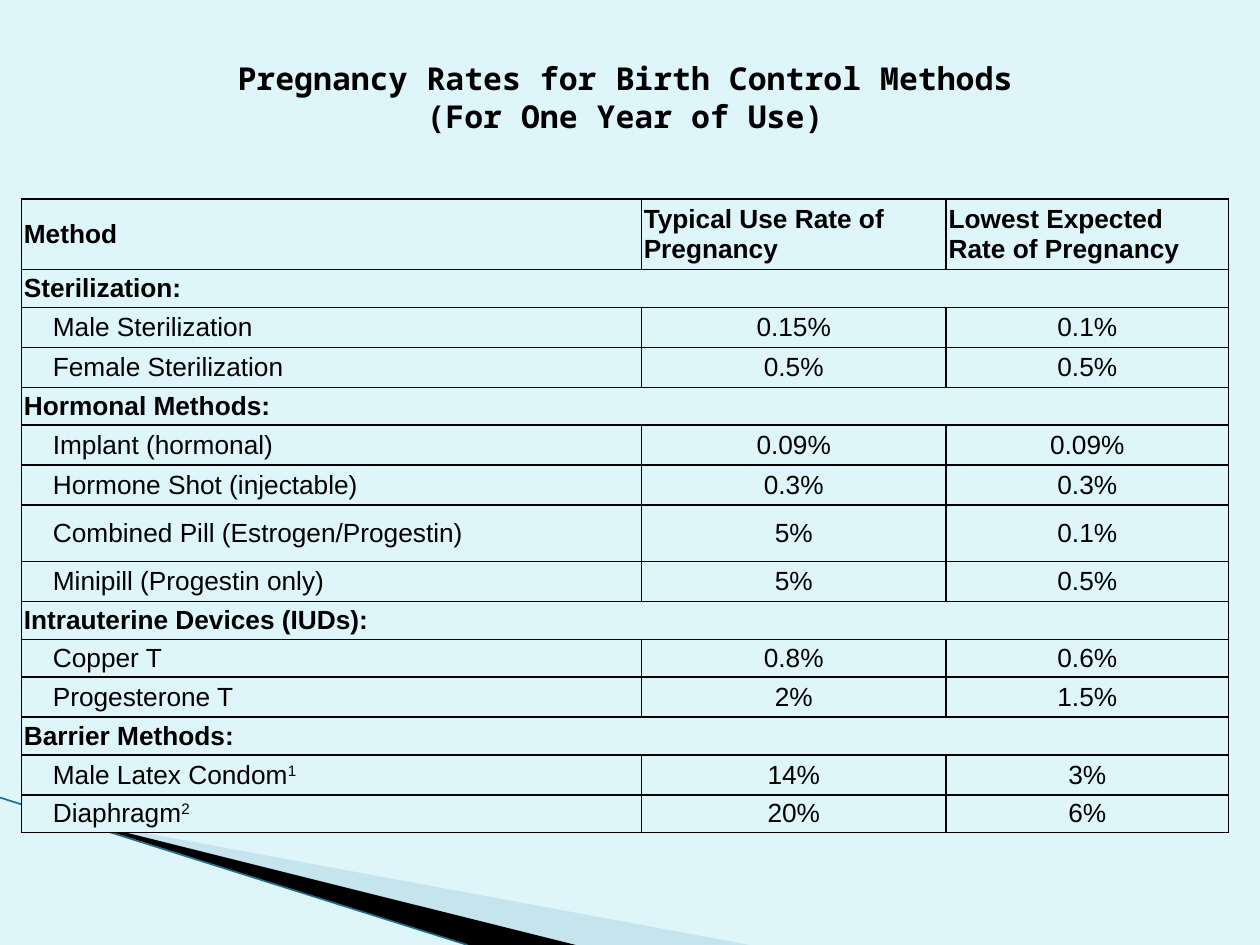
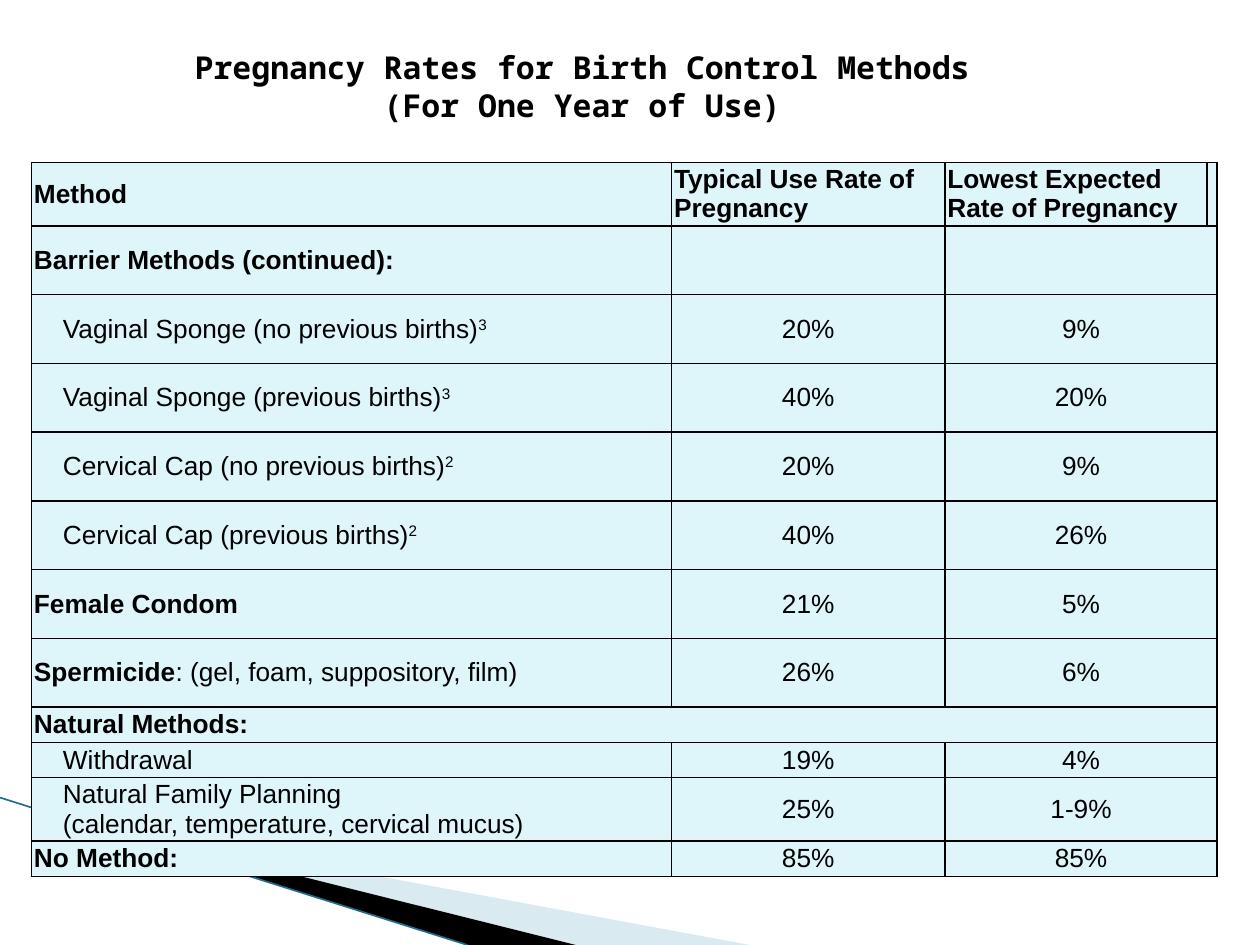
from dataclasses import dataclass

from lxml import etree
from pptx import Presentation
from pptx import util as u
from pptx.dml.color import RGBColor
from pptx.enum import text
from pptx.enum.shapes import MSO_CONNECTOR
from pptx.oxml.ns import qn

COLORS = {"ink": "000000", "ice": "DEF5FA", "paper": "FFFFFF",
          "wedge": "A0CBDC", "edge": "1F6E8C"}
TITLE = ("Pregnancy Rates for Birth Control Methods", "(For One Year of Use)")
COLUMN_HEADS = ("Typical Use Rate of Pregnancy", "Lowest Expected Rate of Pregnancy")


def rgb(name):
    return RGBColor.from_string(COLORS[name])


@dataclass
class Row:
    """One table row; without values its label runs across the whole table."""
    height: float
    label: str
    values: tuple = ()
    bold: bool = False
    indent: bool = False
    note: str = ""
    detail: str = ""


def head(height):
    return Row(height, "Method", COLUMN_HEADS, bold=True)


def group(height, label, *values):
    return Row(height, label, values, bold=True)


def item(height, label, typical, lowest, note=""):
    return Row(height, label, (typical, lowest), indent=True, note=note)


class Deck:
    """Style and current page; lengths count cells of a 100 x 75 grid."""
    COLUMNS, ROWS = 100, 75
    TITLE_FONT, TABLE_FONT = "Noto Sans Mono", "Arial"
    TITLE_SIZE, TABLE_SIZE = 18, 15
    INSET, INDENT = 0.2, 2.3

    def __init__(self):
        self.deck = Presentation()
        self.deck.slide_width, self.deck.slide_height = u.Inches(10), u.Inches(7.5)
        self.page = None

    def x(self, columns):
        return round(self.deck.slide_width * columns / self.COLUMNS)

    def y(self, rows):
        return round(self.deck.slide_height * rows / self.ROWS)

    def new_page(self, background):
        self.page = self.deck.slides.add_slide(self.deck.slide_layouts[5])
        fill = self.page.background.fill
        fill.solid()
        fill.fore_color.rgb = rgb(background)
        self.wedge([(5.5, 65), (59.5, 75), (45.6, 75)], "wedge", 40)
        self.wedge([(5.3, 64.9), (45.7, 75), (37.1, 75)], "ink")
        self.edge((0, 63.3), (37.1, 75))

    def wedge(self, corners, color, opacity=100):
        points = [(self.x(left), self.y(top)) for left, top in corners]
        outline = self.page.shapes.build_freeform(*points[0])
        outline.add_line_segments(points[1:])
        shape = outline.convert_to_shape()
        shape.shadow.inherit = False
        shape.fill.solid()
        shape.fill.fore_color.rgb = rgb(color)
        shape.line.fill.background()
        if opacity < 100:
            tint = shape._element.spPr.find(".//" + qn("a:srgbClr"))
            etree.SubElement(tint, qn("a:alpha"), val=str(opacity * 1000))

    def edge(self, start, end):
        line = self.page.shapes.add_connector(
            MSO_CONNECTOR.STRAIGHT, self.x(start[0]), self.y(start[1]),
            self.x(end[0]), self.y(end[1]))
        line.line.color.rgb = rgb("edge")
        line.line.width = u.Pt(0.95)
        etree.SubElement(line._element.spPr, qn("a:effectLst"))

    def title(self, left, top, width, height):
        box = self.page.shapes.title
        box.left, box.top = self.x(left), self.y(top)
        box.width, box.height = self.x(width), self.y(height)
        frame = box.text_frame
        frame.word_wrap = True
        frame.auto_size = text.MSO_AUTO_SIZE.NONE
        frame.vertical_anchor = text.MSO_ANCHOR.TOP
        for number, words in enumerate(TITLE):
            para = frame.add_paragraph() if number else frame.paragraphs[0]
            para.alignment = text.PP_ALIGN.CENTER
            self.span(para, words, self.TITLE_FONT, self.TITLE_SIZE, bold=True)

    def span(self, para, words, font, size, bold=False, raised=False):
        for number, line in enumerate(words.split("\n")):
            if number:
                para.add_line_break()
            span = para.add_run()
            span.text = line
            span.font.name, span.font.size = font, u.Pt(size)
            span.font.bold = bold
            span.font.color.rgb = rgb("ink")
            if raised:
                span._r.get_or_add_rPr().set("baseline", "30000")

    def table(self, left, top, widths, rows):
        frame = self.page.shapes.add_table(
            len(rows), len(widths), self.x(left), self.y(top),
            self.x(sum(widths)), self.y(sum(row.height for row in rows)))
        table = frame.table
        table.first_row = table.horz_banding = False
        for column, width in zip(table.columns, widths):
            column.width = self.x(width)
        last = len(widths) - 1
        for number, row in enumerate(rows):
            table.rows[number].height = self.y(row.height)
            cells = [table.cell(number, place) for place in range(len(widths))]
            for cell in cells:
                self.style_cell(cell)
            if not row.values:
                cells[0].merge(cells[last])
            elif number and last > 2:
                cells[2].merge(cells[last])
            self.label(cells[0], row)
            for cell, value in zip(cells[1:], row.values):
                if value:
                    para = cell.text_frame.paragraphs[0]
                    if number:
                        para.alignment = text.PP_ALIGN.CENTER
                    self.span(para, value, self.TABLE_FONT, self.TABLE_SIZE,
                              bold=not number)

    def label(self, cell, row):
        para = cell.text_frame.paragraphs[0]
        if row.indent:
            para._p.get_or_add_pPr().set("marL", str(self.x(self.INDENT)))
        style = (self.TABLE_FONT, self.TABLE_SIZE)
        self.span(para, row.label, *style, bold=row.bold)
        if row.detail:
            self.span(para, row.detail, *style)
        if row.note:
            self.span(para, row.note, *style, raised=True)

    def style_cell(self, cell):
        cell.margin_left = cell.margin_right = self.x(self.INSET)
        cell.margin_top = cell.margin_bottom = self.y(self.INSET)
        cell.vertical_anchor = text.MSO_ANCHOR.MIDDLE
        properties = cell._tc.get_or_add_tcPr()
        for side in ("lnL", "lnR", "lnT", "lnB"):
            border = etree.SubElement(properties, qn("a:" + side), w=str(u.Pt(1)))
            fill = etree.SubElement(border, qn("a:solidFill"))
            etree.SubElement(fill, qn("a:srgbClr"), val=COLORS["ink"])
        cell.fill.solid()
        cell.fill.fore_color.rgb = rgb("ice")

    def save(self):
        self.deck.save("out.pptx")


def main():
    deck = Deck()

    deck.new_page("ice")
    deck.title(1.7, 4.2, 95.8, 7.1)
    deck.table(1.7, 15.8, (49.2, 24.2, 22.4), [
        head(5.6),
        group(3, "Sterilization:"),
        item(3.17, "Male Sterilization", "0.15%", "0.1%"),
        item(3.17, "Female Sterilization", "0.5%", "0.5%"),
        group(3, "Hormonal Methods:"),
        item(3.17, "Implant (hormonal)", "0.09%", "0.09%"),
        item(3.17, "Hormone Shot (injectable)", "0.3%", "0.3%"),
        item(4.5, "Combined Pill (Estrogen/Progestin)", "5%", "0.1%"),
        item(3.17, "Minipill (Progestin only)", "5%", "0.5%"),
        group(3, "Intrauterine Devices (IUDs):"),
        item(3, "Copper T", "0.8%", "0.6%"),
        item(3.17, "Progesterone T", "2%", "1.5%"),
        group(3, "Barrier Methods:"),
        item(3.17, "Male Latex Condom", "14%", "3%", note="1"),
        item(3, "Diaphragm", "20%", "6%", note="2"),
    ])

    deck.new_page("paper")
    deck.title(5.8, 3.3, 80.8, 10.1)
    deck.table(2.5, 12.9, (50.8, 21.7, 20.8, 0.8), [
        head(4.5),
        group(5.46, "Barrier Methods (continued):", "", ""),
        item(5.46, "Vaginal Sponge (no previous births)", "20%", "9%", note="3"),
        item(5.46, "Vaginal Sponge (previous births)", "40%", "20%", note="3"),
        item(5.46, "Cervical Cap (no previous births)", "20%", "9%", note="2"),
        item(5.46, "Cervical Cap (previous births)", "40%", "26%", note="2"),
        group(5.46, "Female Condom", "21%", "5%"),
        Row(5.46, "Spermicide", ("26%", "6%"), bold=True,
            detail=": (gel, foam, suppository, film)"),
        group(2.8, "Natural Methods:"),
        item(2.8, "Withdrawal", "19%", "4%"),
        item(4.9, "Natural Family Planning\n(calendar, temperature, cervical mucus)",
             "25%", "1-9%"),
        group(2.8, "No Method:", "85%", "85%"),
    ])

    deck.save()


if __name__ == "__main__":
    main()
